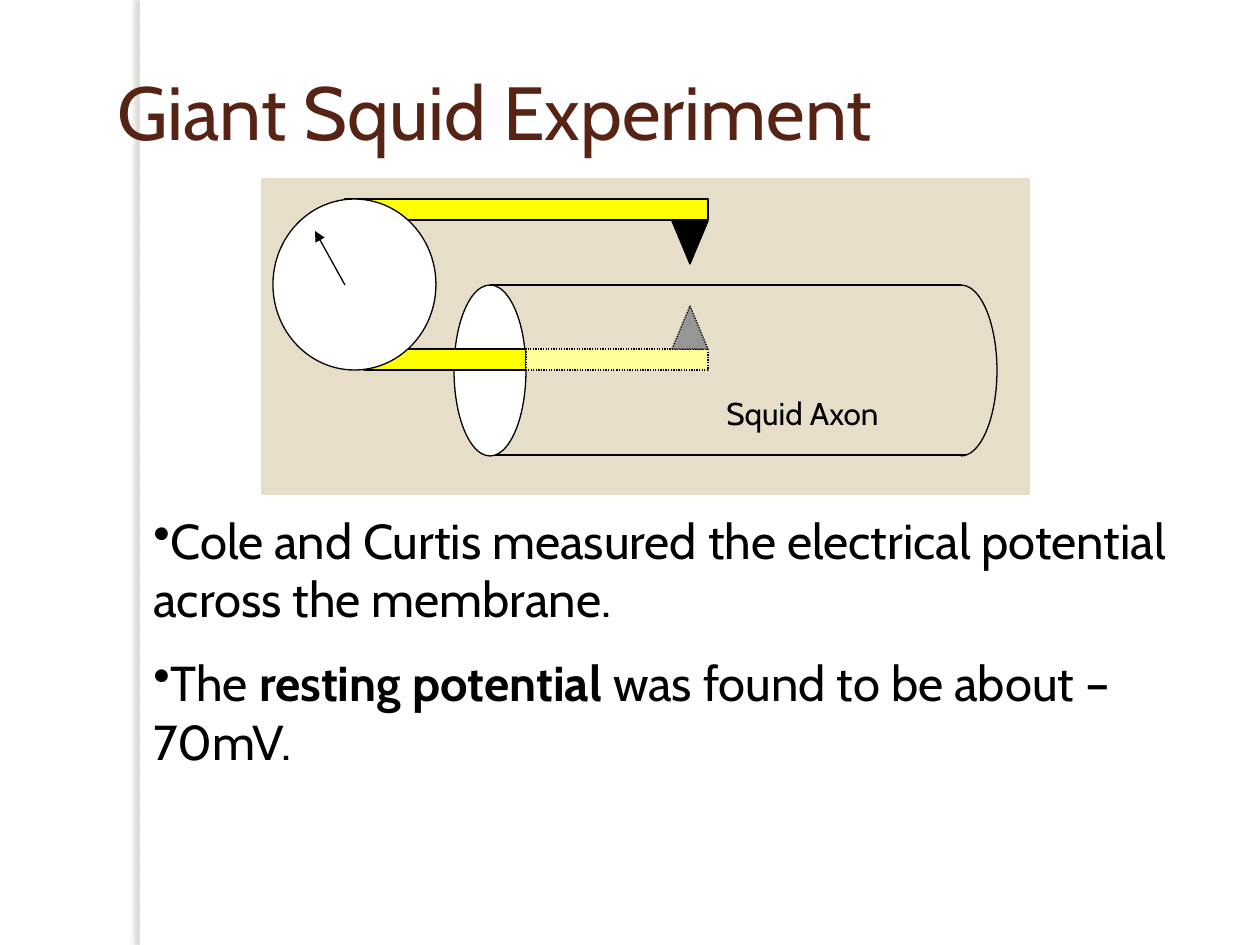
import pptx
import pptx.util
import pptx.dml.color
import pptx.enum.dml
import pptx.enum.shapes
import pptx.enum.text
import pptx.oxml
import pptx.oxml.ns
from lxml import etree

RGBColor = pptx.dml.color.RGBColor
SHAPE = pptx.enum.shapes.MSO_SHAPE
BLACK = RGBColor(0, 0, 0)
WHITE = RGBColor(255, 255, 255)
BROWN = RGBColor(0x57, 0x23, 0x14)
SAND = RGBColor(0xE7, 0xDE, 0xC9)
YELLOW = RGBColor(255, 255, 0)
PALE_YELLOW = RGBColor(255, 255, 0x99)
GRAY = RGBColor(0x96, 0x96, 0x96)
FONT = "Cabin"
EMU_PER_PX = 914400 / 126
SHADOW = (
    '<a:effectLst xmlns:a="http://schemas.openxmlformats.org/drawingml/2006/main">'
    '<a:outerShdw blurRad="38100" dist="38100" dir="10800000" rotWithShape="0">'
    '<a:srgbClr val="736F63"><a:alpha val="25000"/></a:srgbClr>'
    '</a:outerShdw></a:effectLst>'
)


def px(*lengths):
    return [round(length * EMU_PER_PX) for length in lengths]


class SlideBuilder:
    def __init__(self, slide):
        self.slide = slide
        self.shapes = slide.shapes

    def start_group(self):
        self.shapes = self.slide.shapes.add_group_shape().shapes

    def style_font(self, paragraph, size, color):
        paragraph.font.name = FONT
        paragraph.font.size = pptx.util.Pt(size)
        paragraph.font.color.rgb = color

    def style_line(self, line, color, dotted=False):
        line.color.rgb = color
        line.width = pptx.util.Pt(0.75)
        if dotted:
            line.dash_style = pptx.enum.dml.MSO_LINE.ROUND_DOT

    def title(self, text, box):
        title = self.slide.shapes.title
        title.left, title.top, title.width, title.height = px(*box)
        frame = title.text_frame
        frame.text = text
        frame.vertical_anchor = pptx.enum.text.MSO_ANCHOR.MIDDLE
        paragraph = frame.paragraphs[0]
        paragraph.alignment = pptx.enum.text.PP_ALIGN.LEFT
        self.style_font(paragraph, 43, BROWN)

    def shape(self, kind, box, fill, line=BLACK, dotted=False):
        shape = self.shapes.add_shape(kind, *px(*box))
        shape.shadow.inherit = False
        if fill is None:
            shape.fill.background()
        else:
            shape.fill.solid()
            shape.fill.fore_color.rgb = fill
        if line is None:
            shape.line.fill.background()
        else:
            self.style_line(shape.line, line, dotted)
        return shape

    def shadowed_bar(self, box):
        bar = self.shape(SHAPE.RECTANGLE, box, WHITE, None)
        properties = bar._element.spPr
        properties.remove(properties.find(pptx.oxml.ns.qn("a:effectLst")))
        properties.append(pptx.oxml.parse_xml(SHADOW))
        self.slide.shapes.title._element.addprevious(bar._element)

    def line(self, start, end, arrow=False):
        connector = self.shapes.add_connector(
            pptx.enum.shapes.MSO_CONNECTOR.STRAIGHT, *px(*start, *end))
        self.style_line(connector.line, BLACK)
        if arrow:
            outline = connector.line._get_or_add_ln()
            etree.SubElement(outline, pptx.oxml.ns.qn("a:tailEnd"), type="triangle")
        etree.SubElement(connector._element.spPr, pptx.oxml.ns.qn("a:effectLst"))

    def text(self, box, paragraphs, size, bullet=False, centered=False):
        frame = self.shapes.add_textbox(*px(*box)).text_frame
        frame.word_wrap = True
        for index, runs in enumerate(paragraphs):
            paragraph = frame.add_paragraph() if index else frame.paragraphs[0]
            paragraph.space_before = pptx.util.Pt(size / 2)
            self.style_font(paragraph, size, BLACK)
            if centered:
                paragraph.alignment = pptx.enum.text.PP_ALIGN.CENTER
            if bullet:
                properties = paragraph._p.get_or_add_pPr()
                defaults = properties.find(pptx.oxml.ns.qn("a:defRPr"))
                for tag, attributes in (("a:buFontTx", {}), ("a:buChar", {"char": "•"})):
                    defaults.addprevious(
                        properties.makeelement(pptx.oxml.ns.qn(tag), attributes))
            for words, bold in runs:
                run = paragraph.add_run()
                run.text = words
                if bold:
                    run.font.bold = True


def main():
    presentation = pptx.Presentation()
    presentation.slide_width, presentation.slide_height = px(1260, 945)
    builder = SlideBuilder(presentation.slides.add_slide(presentation.slide_layouts[5]))

    builder.shadowed_bar((140, 0, 10, 945))
    builder.title("Giant Squid Experiment", (105, 32, 1071, 157))
    builder.text((141, 504, 1119, 280), [
        [("Cole and Curtis measured the electrical potential across the membrane.", False)],
        [("The ", False), ("resting potential", True),
         (" was found to be about –70mV.", False)],
    ], 28, bullet=True)

    builder.start_group()
    builder.shape(SHAPE.RECTANGLE, (262, 179, 767, 315), SAND, SAND)

    axon_top, axon_height, end_width = 285, 171, 72
    builder.shape(SHAPE.OVAL, (454, axon_top, end_width, axon_height), WHITE)
    builder.line((490, axon_top), (961, axon_top))
    builder.line((495, 455), (966, 455))
    axon_end = builder.shape(SHAPE.ARC, (925, axon_top, end_width, axon_height), None)
    axon_end.adjustments[0] = 162
    axon_end.adjustments[1] = 54

    builder.shape(SHAPE.RECTANGLE, (364, 349, 162, 21), YELLOW)
    builder.shape(SHAPE.RECTANGLE, (526, 349, 182, 21), PALE_YELLOW, dotted=True)
    builder.shape(SHAPE.RECTANGLE, (345, 199, 363, 21), YELLOW)
    builder.shape(SHAPE.ISOSCELES_TRIANGLE, (672, 306, 36, 43), GRAY, dotted=True)
    outer_tip = builder.shape(SHAPE.ISOSCELES_TRIANGLE, (672, 221, 36, 43), BLACK)
    outer_tip.rotation = 180

    builder.shape(SHAPE.OVAL, (273, 199, 163, 171), WHITE)
    builder.line((345, 285), (315, 231), arrow=True)
    builder.text((640, 388, 325, 63), [[("Squid Axon", False)]], 18, centered=True)

    presentation.save("out.pptx")


if __name__ == "__main__":
    main()
